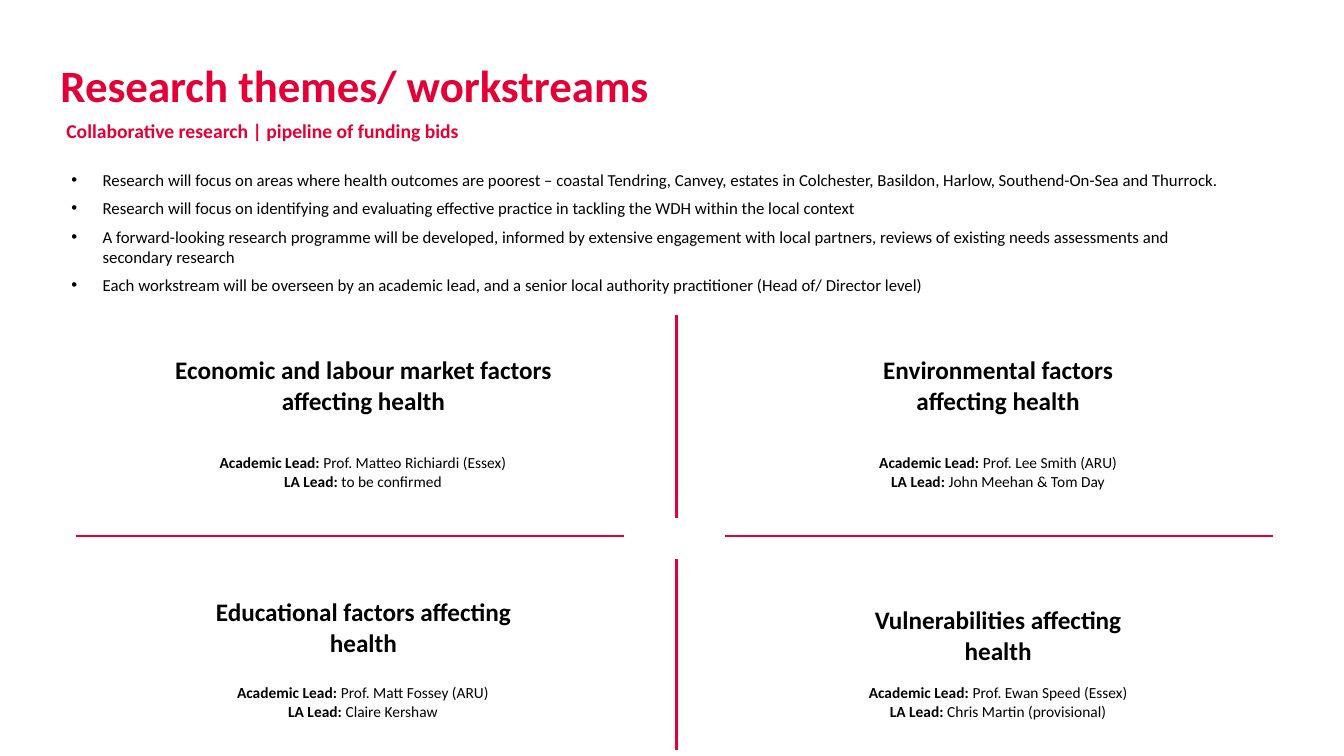
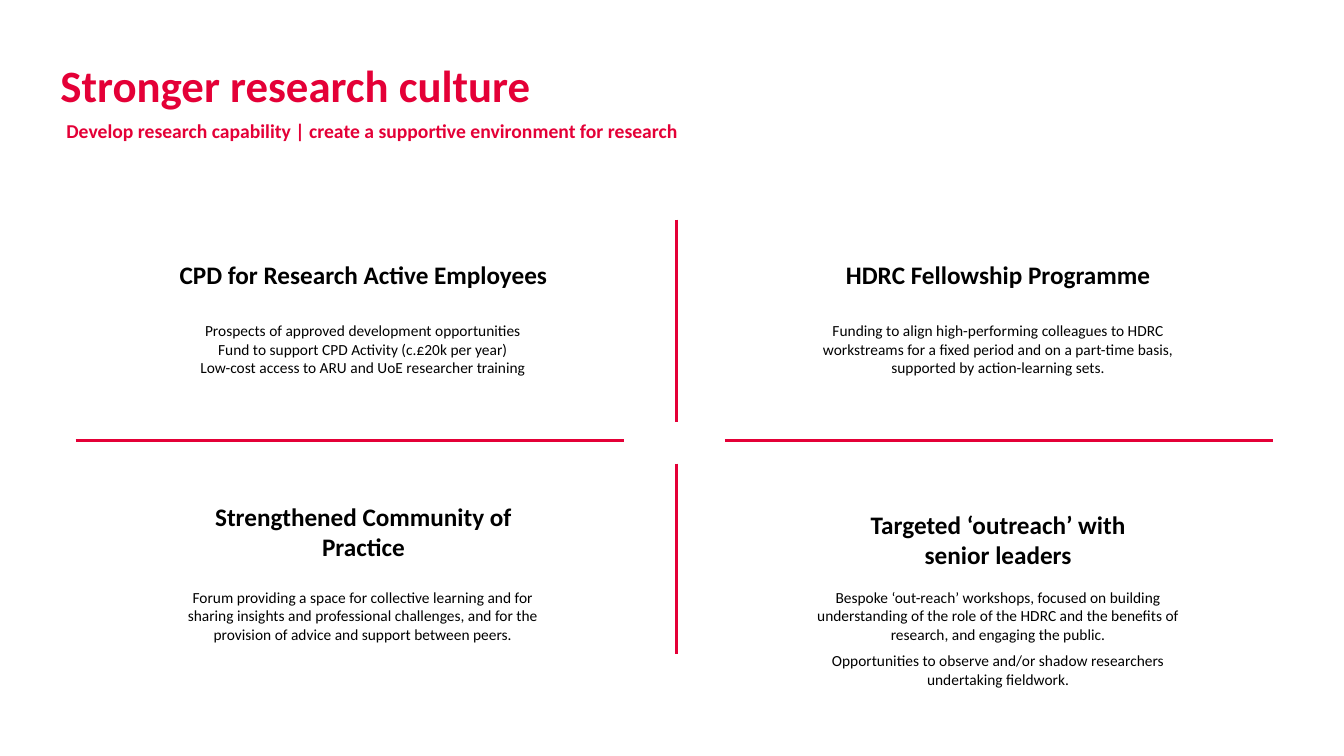
from lxml import etree
from pptx import Presentation, util as u
from pptx.dml.color import RGBColor
from pptx.enum import shapes, text
from pptx.oxml import ns

PX = 9144
RED = RGBColor(0xE4, 0x00, 0x37)
BLACK = RGBColor(0, 0, 0)
FONT = "Calibri"
CENTRES = (285, 915)
HEADING_WIDTHS = (431, 340, 333, 294)
HEADING_TOPS = (34, 34, 187, 195)
LOWER_BODY_TOP = 365

THEMES_POINTS = (
    "Research will focus on areas where health outcomes are poorest – coastal Tendring, Canvey, "
    "estates in Colchester, Basildon, Harlow, Southend-On-Sea and Thurrock.",
    "Research will focus on identifying and evaluating effective practice in tackling the WDH "
    "within the local context",
    "A forward-looking research programme will be developed, informed by extensive engagement with "
    "local partners, reviews of existing needs assessments and secondary research",
    "Each workstream will be overseen by an academic lead, and a senior local authority "
    "practitioner (Head of/ Director level)",
)


def leads(academic, authority):
    """Return the two labelled lines naming a workstream's leads."""
    return [("Academic Lead: ", academic), ("LA Lead: ", authority)]


def plain(*lines):
    """Return unlabelled lines."""
    return [("", line) for line in lines]


THEMES = (
    ("Economic and labour market factors affecting health",
     leads("Prof. Matteo Richiardi (Essex)", "to be confirmed")),
    ("Environmental factors affecting health",
     leads("Prof. Lee Smith (ARU)", "John Meehan & Tom Day")),
    ("Educational factors affecting health",
     leads("Prof. Matt Fossey (ARU)", "Claire Kershaw")),
    ("Vulnerabilities affecting health",
     leads("Prof. Ewan Speed (Essex)", "Chris Martin (provisional)")),
)
CULTURE = (
    ("CPD for Research Active Employees",
     plain("Prospects of approved development opportunities",
           "Fund to support CPD Activity (c.£20k per year)",
           "Low-cost access to ARU and UoE researcher training")),
    ("HDRC Fellowship Programme",
     plain("Funding to align high-performing colleagues to HDRC workstreams for a fixed period "
           "and on a part-time basis, supported by action-learning sets.")),
    ("Strengthened Community of Practice",
     plain("Forum providing a space for collective learning and for sharing insights and "
           "professional challenges, and for the provision of advice and support between peers.")),
    ("Targeted ‘outreach’ with senior leaders",
     plain("Bespoke ‘out-reach’ workshops, focused on building understanding of the role of the "
           "HDRC and the benefits of research, and engaging the public.",
           "Opportunities to observe and/or shadow researchers undertaking fieldwork.")),
)


def add_text(slide, box, lines, size, color=BLACK, bold=False, centred=False,
             middle=False, inset=True, before=0, after=0):
    """Place (label, text) lines in a wrapping box and return its paragraphs."""
    frame = slide.shapes.add_textbox(*(n * PX for n in box)).text_frame
    frame.word_wrap = True
    frame.vertical_anchor = text.MSO_ANCHOR.MIDDLE if middle else text.MSO_ANCHOR.TOP
    if not inset:
        frame.margin_left = frame.margin_right = frame.margin_top = frame.margin_bottom = 0
    for index, (label, words) in enumerate(lines):
        paragraph = frame.add_paragraph() if index else frame.paragraphs[0]
        paragraph.alignment = text.PP_ALIGN.CENTER if centred else text.PP_ALIGN.LEFT
        paragraph.space_before, paragraph.space_after = u.Pt(before), u.Pt(after)
        for part, strong in ((label, True), (words, bold)):
            if part:
                run = paragraph.add_run()
                run.text = part
                run.font.name, run.font.size, run.font.bold = FONT, u.Pt(size), strong
                run.font.color.rgb = color
    return frame.paragraphs


def add_rule(slide, *ends):
    """Draw a red dividing line between two points."""
    rule = slide.shapes.add_connector(shapes.MSO_CONNECTOR.STRAIGHT, *(n * PX for n in ends))
    rule.line.color.rgb = RED
    rule.line.width = u.Pt(1.5)
    etree.SubElement(rule._element.spPr, ns.qn("a:effectLst"))


def add_header(slide, title, subtitle):
    """Place the slide title and the line beneath it."""
    add_text(slide, (60, 57, 1142, 116), plain(title), 32, RED, bold=True, inset=False)
    add_text(slide, (56, 113, 1218, 34), plain(subtitle), 14, RED, bold=True, after=11.3)


def add_points(slide, box, points):
    """Place a bulleted list with hanging indents."""
    for paragraph in add_text(slide, box, plain(*points), 12, before=6):
        properties = paragraph._p.get_or_add_pPr()
        properties.set("marL", str(31 * PX))
        properties.set("indent", str(-31 * PX))
        etree.SubElement(properties, ns.qn("a:buFont"), typeface="Arial")
        etree.SubElement(properties, ns.qn("a:buChar"), char="•")


def add_quadrants(slide, left, top, topics, upper_body_top):
    """Place four topics around a broken cross of rules."""
    for start, end in ((0, 201), (242, 431)):
        add_rule(slide, left + 596, top + start, left + 596, top + end)
    for start in (0, 644):
        add_rule(slide, left + start, top + 219, left + start + 544, top + 219)
    for index, (heading, body) in enumerate(topics):
        lower = index > 1
        centre = left + CENTRES[index % 2]
        width = HEADING_WIDTHS[index]
        add_text(slide, (centre - width // 2, top + HEADING_TOPS[index], width,
                         244 if lower else 116),
                 plain(heading), 18, bold=True, centred=True, middle=lower, after=11.3)
        body_top = LOWER_BODY_TOP if lower else upper_body_top
        add_text(slide, (centre - 190, top + body_top, 380, 54), body, 11, centred=True,
                 inset=False, after=6 if topics is CULTURE and index == 3 else 0)


def main():
    """Build and save both slides."""
    deck = Presentation()
    deck.slide_width, deck.slide_height = u.Inches(13.33), u.Inches(7.5)
    blank = deck.slide_layouts[6]

    themes = deck.slides.add_slide(blank)
    add_header(themes, "Research themes/ workstreams",
               "Collaborative research | pipeline of funding bids")
    add_points(themes, (61, 163, 1169, 163), THEMES_POINTS)
    add_quadrants(themes, 75, 313, THEMES, 137)

    culture = deck.slides.add_slide(blank)
    add_header(culture, "Stronger research culture",
               "Develop research capability | create a supportive environment for research")
    add_quadrants(culture, 75, 218, CULTURE, 101)

    deck.save("out.pptx")


if __name__ == "__main__":
    main()
